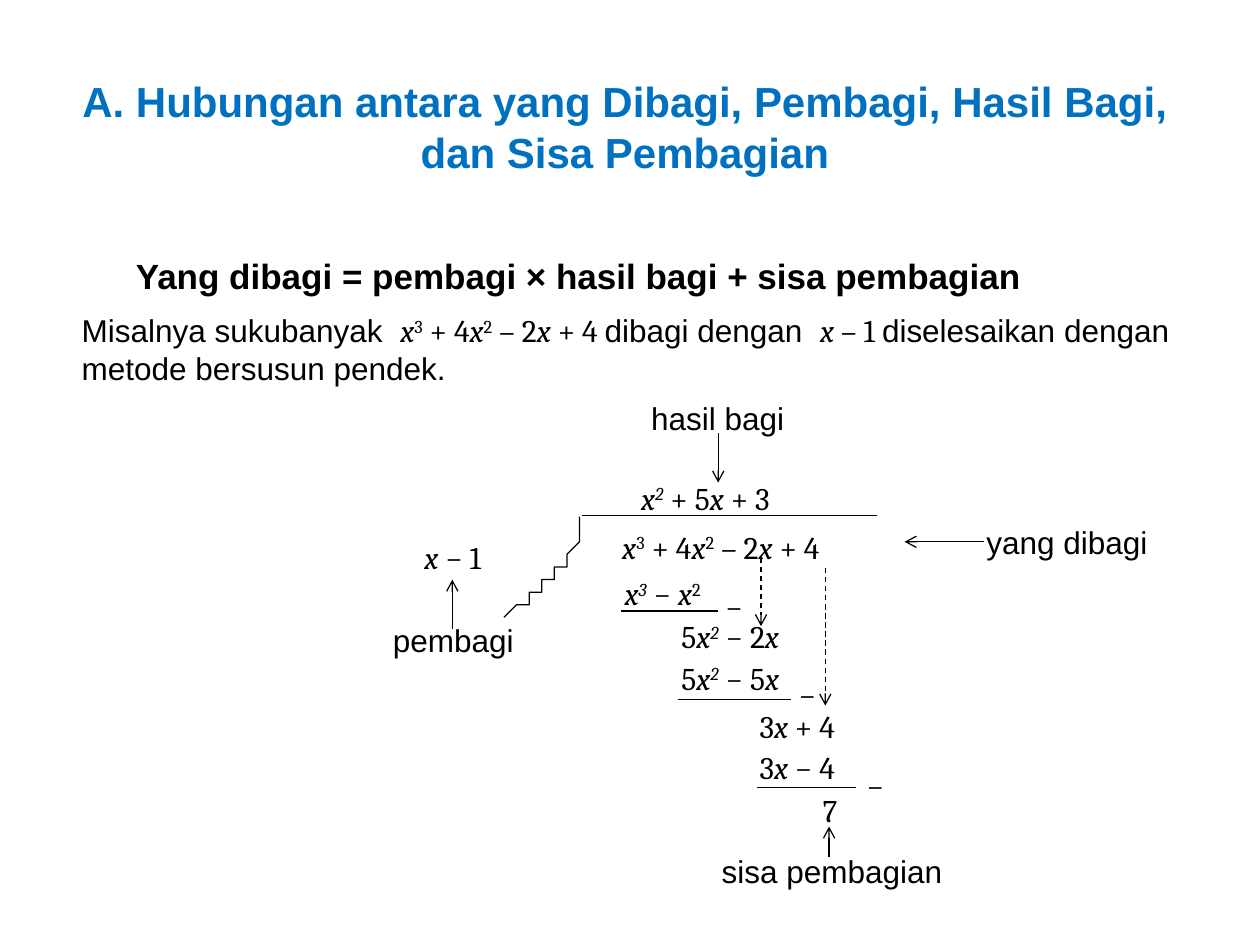
from itertools import groupby
from typing import NamedTuple

from lxml import etree
from pptx import Presentation
from pptx import util as u
from pptx.dml import color, line as dashes
from pptx.enum import dml, shapes, text
from pptx.oxml import ns

CELL = 0.1
COLUMNS, ROWS = 100, 75
LABEL_HEIGHT = 4
SANS, MATH = "Arial", "Cambria"
BLACK, BLUE = "000000", "0070C0"


class Label(NamedTuple):
    """Words in one font; in maths x is italic, ^ raises and ~ raises in italics."""
    column: float
    row: float
    columns: float
    words: str
    font: str = MATH


class Rule(NamedTuple):
    """A straight stroke between two grid points."""
    start: tuple[float, float]
    end: tuple[float, float]
    arrow: bool = True
    dashed: bool = False


LABELS = [
    Label(49.9, 37.5, 13.6, "x~2 + 5x + 3"),
    Label(48.4, 41.4, 19.4, "x^3 + 4x^2 – 2x + 4"),
    Label(48.6, 45.1, 8.6, "x~3 − x^2"),
    Label(53.1, 48.5, 10.3, "5x~2 − 2x"),
    Label(53.1, 51.8, 10.3, "5x~2 − 5x"),
    Label(59.3, 55.6, 8.3, "3x + 4"),
    Label(59.3, 58.9, 8.3, "3x − 4"),
    Label(64.3, 62.3, 3.3, "7"),
    Label(32.7, 42.2, 7.1, "x − 1"),
    *(Label(column, row, 3.4, "−")
      for column, row in [(56.6, 46.1), (62.4, 53.1), (67.8, 60.3)]),
    Label(77.3, 41, 14.9, "yang dibagi", SANS),
    Label(56.3, 67.1, 19.7, "sisa pembagian", SANS),
    Label(30.2, 48.8, 11.7, "pembagi", SANS),
    Label(50.7, 31.2, 12.7, "hasil bagi", SANS),
]

RULES = [
    *(Rule((left, row), (right, row), arrow=False)
      for left, right, row in [(46.2, 69.6, 40.9), (49.3, 57, 48.5),
                               (53.8, 62.8, 55.5), (60.1, 67.9, 62.5)]),
    Rule((78.1, 43), (71.8, 43)),
    Rule((35.9, 49.9), (35.9, 46)),
    Rule((57, 34.4), (57, 38.3)),
    Rule((65.8, 68), (65.8, 65.6)),
    Rule((65.5, 45.1), (65.5, 56), dashed=True),
    Rule((60.4, 44.3), (60.4, 49.7), dashed=True),
]

EXAMPLE = [
    (SANS, "Misalnya sukubanyak  "),
    (MATH, "x^3 + 4x^2 – 2x + 4 "),
    (SANS, "dibagi dengan  "),
    (MATH, "x – 1 "),
    (SANS, "diselesaikan dengan metode bersusun pendek."),
]


def grid(cells: float) -> u.Emu:
    """Turn grid cells into a length."""
    return u.Inches(cells * CELL)


def rgb(value: str) -> color.RGBColor:
    """Turn a hex string into a colour."""
    return color.RGBColor.from_string(value)


def format_font(font, size: float, name: str = SANS, shade: str = BLACK, bold: bool = False) -> None:
    """Set size, face, colour and weight."""
    font.size, font.name, font.bold = u.Pt(size), name, bold
    font.color.rgb = rgb(shade)


def add_box(page, column: float, row: float, columns: float, rows: float, wrap: bool = False):
    """Add an empty text box and return its first paragraph."""
    box = page.shapes.add_textbox(*map(grid, (column, row, columns, rows)))
    box.text_frame.word_wrap = wrap
    box.text_frame.auto_size = text.MSO_AUTO_SIZE.SHAPE_TO_FIT_TEXT
    return box.text_frame.paragraphs[0]


def styled_letters(words: str):
    """Yield each letter with its italic and raised state."""
    mark = ""
    for letter in words:
        if letter in "^~":
            mark = letter
        else:
            yield letter, (letter == "x" or mark == "~", bool(mark))
            mark = ""


def add_math(para, words: str) -> None:
    """Add maths as one span for each change of style."""
    for (italic, raised), letters in groupby(styled_letters(words), key=lambda pair: pair[1]):
        span = para.add_run()
        span.text = "".join(letter for letter, _ in letters)
        span.font.name, span.font.italic = MATH, italic
        if raised:
            span.font._element.set("baseline", "30000")


def add_words(para, words: str, font: str) -> None:
    """Add words as maths or as plain text."""
    if font == MATH:
        add_math(para, words)
    else:
        span = para.add_run()
        span.text, span.font.name = words, font


def draw_label(page, label: Label) -> None:
    """Draw one label of the division."""
    para = add_box(page, label.column, label.row, label.columns, LABEL_HEIGHT)
    format_font(para.font, 18, label.font)
    add_words(para, label.words, label.font)


def draw_rule(page, rule: Rule) -> None:
    """Draw one stroke, dashed or with an arrowhead when asked."""
    stroke = page.shapes.add_connector(
        shapes.MSO_CONNECTOR.STRAIGHT, *map(grid, (*rule.start, *rule.end)))
    etree.SubElement(stroke._element.spPr, ns.qn("a:effectLst"))
    format_line(stroke.line)
    if rule.dashed:
        stroke.line.dash_style = dml.MSO_LINE.DASH
    if rule.arrow:
        etree.SubElement(stroke.line._get_or_add_ln(), ns.qn("a:tailEnd"), type="arrow")


def format_line(line: dashes.LineFormat) -> None:
    """Make a line thin and black."""
    line.color.rgb, line.width = rgb(BLACK), u.Pt(0.75)


def draw_bracket(page) -> None:
    """Draw the curved side of the division sign."""
    start = (46.2, 40.9)
    curves = [((45.9, 42.3), (45.6, 43.7), (44.5, 45.1)),
              ((43.5, 46.5), (41.7, 47.7), (39.9, 49))]
    points = [start]
    for first, second, end in curves:
        origin = points[-1]
        for step in range(1, 13):
            t = step / 12
            points.append(tuple(
                (1 - t) ** 3 * a + 3 * (1 - t) ** 2 * t * b + 3 * (1 - t) * t ** 2 * c + t ** 3 * d
                for a, b, c, d in zip(origin, first, second, end)))
    builder = page.shapes.build_freeform(*start, scale=float(grid(1)))
    builder.add_line_segments(points[1:], close=False)
    bracket = builder.convert_to_shape()
    bracket.shadow.inherit = False
    bracket.fill.background()
    format_line(bracket.line)


def draw_title(page) -> None:
    """Place and format the title."""
    title = page.shapes.title
    title.left, title.top, title.width, title.height = map(grid, (4.7, 5.5, 89.8, 9.1))
    frame = title.text_frame
    frame.text = "A. Hubungan antara yang Dibagi, Pembagi, Hasil Bagi, dan Sisa Pembagian"
    frame.vertical_anchor = text.MSO_ANCHOR.TOP
    frame.auto_size, frame.word_wrap = text.MSO_AUTO_SIZE.NONE, True
    frame.paragraphs[0].alignment = text.PP_ALIGN.CENTER
    format_font(frame.paragraphs[0].font, 24, shade=BLUE, bold=True)


def main() -> None:
    """Build and save the slide."""
    deck = Presentation()
    deck.slide_width, deck.slide_height = grid(COLUMNS), grid(ROWS)
    page = deck.slides.add_slide(deck.slide_layouts[5])
    draw_title(page)
    formula = add_box(page, 9.8, 19.7, 72.7, 4.4)
    formula.text = "Yang dibagi = pembagi × hasil bagi + sisa pembagian"
    format_font(formula.font, 20, bold=True)
    example = add_box(page, 5.5, 24.2, 89.1, 7.1, wrap=True)
    format_font(example.font, 18)
    for font, words in EXAMPLE:
        add_words(example, words, font)
    draw_bracket(page)
    for label in LABELS:
        draw_label(page, label)
    for rule in RULES:
        draw_rule(page, rule)
    deck.save("out.pptx")


if __name__ == "__main__":
    main()
